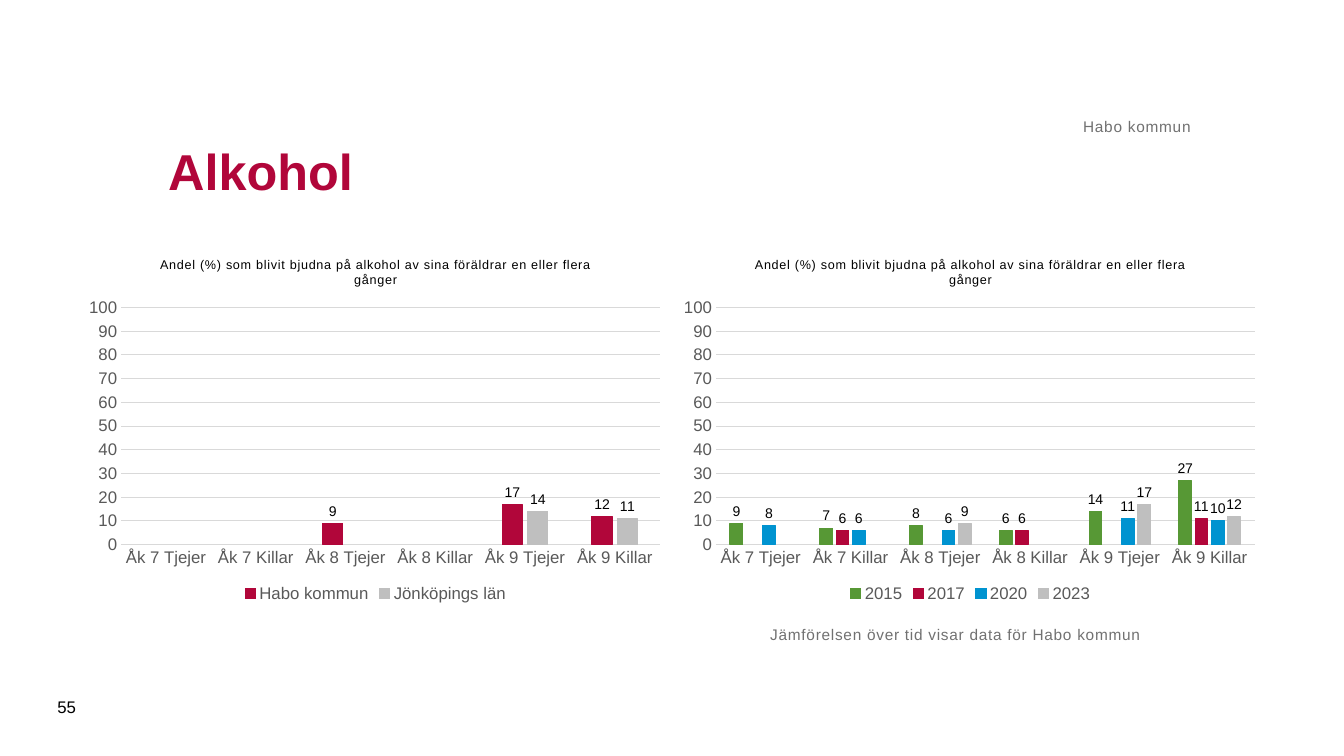
from lxml.etree import SubElement
from pptx import Presentation
from pptx.chart.data import CategoryChartData
from pptx.dml.color import RGBColor
from pptx.enum.chart import XL_CHART_TYPE, XL_LABEL_POSITION, XL_LEGEND_POSITION, XL_TICK_MARK
from pptx.enum.text import MSO_ANCHOR, PP_ALIGN
from pptx.oxml import parse_xml
from pptx.oxml.ns import nsdecls, qn
from pptx.util import Inches, Pt

HUES = {"red": "B1063A", "green": "579835", "blue": "0093D0", "silver": "BFBFBF",
        "rule": "D9D9D9", "axis": "595959", "note": "717171", "black": "000000"}
HEAD = "Andel (%) som blivit bjudna på alkohol av sina föräldrar en eller flera gånger"
CATS = [f"Åk {year} {group}" for year in (7, 8, 9) for group in ("Tjejer", "Killar")]
AREA = [("xMode", "edge"), ("yMode", "edge"), ("x", 0.07), ("y", 0.18), ("w", 0.91), ("h", 0.65)]
CHARTS = [
    (5.93, "#,##0;#,##0", [
        ("Habo kommun", "red", [None, None, 9, None, 17, 12]),
        ("Jönköpings län", "silver", [None, None, None, None, 14, 11])]),
    (50.19, "#,##0", [
        ("2015", "green", [9, 7, 8, 6, 14, 27]),
        ("2017", "red", [None, 6, None, 6, None, 11]),
        ("2020", "blue", [8, 6, 6, None, 11, 10]),
        ("2023", "silver", [None, None, 9, None, 17, 12])]),
]


class Page:
    face = "Arial"

    def __init__(self, deck):
        self.wide, self.high = deck.slide_width, deck.slide_height
        self.slide = deck.slides.add_slide(deck.slide_layouts[6])

    def place(self, x, y, w, h):
        """Turn percentages of the slide's size into lengths."""
        return [int(size * part / 100) for size, part in
                zip((self.wide, self.high) * 2, (x, y, w, h))]

    def style(self, font, size, hue, bold=False):
        font.name, font.size, font.bold = self.face, Pt(size), bold
        font.color.rgb = RGBColor.from_string(HUES[hue])

    def stroke(self, line, hue):
        line.color.rgb = RGBColor.from_string(HUES[hue])
        line.width = Pt(0.75)

    def add_words(self, para, words, size, hue, bold=False, gap=0):
        run = para.add_run()
        run.text = words
        self.style(run.font, size, hue, bold)
        if gap:
            run._r.get_or_add_rPr().set("spc", str(gap))

    def text(self, spot, words, size, hue, bold=False, gap=0, inset=True,
             anchor=MSO_ANCHOR.MIDDLE, align=PP_ALIGN.LEFT):
        frame = self.slide.shapes.add_textbox(*self.place(*spot)).text_frame
        frame.word_wrap = True
        frame.vertical_anchor = anchor
        if not inset:
            frame.margin_left = frame.margin_right = frame.margin_top = frame.margin_bottom = 0
        para = frame.paragraphs[0]
        para.alignment = align
        self.add_words(para, words, size, hue, bold, gap)

    def chart(self, spot, form, rows):
        data = CategoryChartData()
        data.categories = CATS
        for name, _, vals in rows:
            data.add_series(name, vals)
        chart = self.slide.shapes.add_chart(
            XL_CHART_TYPE.COLUMN_CLUSTERED, *self.place(*spot), data).chart
        self.style(chart.font, 10, "black")
        chart.has_title = True
        self.add_words(chart.chart_title.text_frame.paragraphs[0], HEAD, 9, "black", gap=50)
        chart.has_legend = True
        chart.legend.position = XL_LEGEND_POSITION.BOTTOM
        chart.legend.include_in_layout = False
        self.style(chart.legend.font, 12, "axis")
        self.axes(chart)
        self.bars(chart.plots[0], form, rows)
        self.fit(chart)

    def axes(self, chart):
        for axis in (chart.category_axis, chart.value_axis):
            axis.major_tick_mark = axis.minor_tick_mark = XL_TICK_MARK.NONE
            self.style(axis.tick_labels.font, 12, "axis")
        self.stroke(chart.category_axis.format.line, "rule")
        scale = chart.value_axis
        scale.minimum_scale, scale.maximum_scale, scale.major_unit = 0, 100, 10
        scale.format.line.fill.background()
        scale.has_major_gridlines = True
        self.stroke(scale.major_gridlines.format.line, "rule")
        scale.tick_labels.number_format = "#,##0;#,##0"
        scale.tick_labels.number_format_is_linked = False

    def bars(self, plot, form, rows):
        plot.gap_width, plot.overlap, plot.vary_by_categories = 219, -27, False
        for bar, (_, hue, _) in zip(plot.series, rows):
            bar.format.fill.solid()
            bar.format.fill.fore_color.rgb = RGBColor.from_string(HUES[hue])
            self.stroke(bar.format.line, hue)
            labels = bar.data_labels
            labels.show_value = True
            labels.position = XL_LABEL_POSITION.OUTSIDE_END
            labels.number_format = form
            labels.number_format_is_linked = False
            self.style(labels.font, 10, "black")

    def fit(self, chart):
        """Fix the inner plot area as shares of the chart."""
        area = chart._chartSpace.chart.plotArea
        for old in area.findall(qn("c:layout")):
            area.remove(old)
        layout = parse_xml(f'<c:layout {nsdecls("c")}><c:manualLayout>'
                           '<c:layoutTarget val="inner"/></c:manualLayout></c:layout>')
        for tag, val in AREA:
            SubElement(layout[0], qn(f"c:{tag}")).set("val", str(val))
        area.insert(0, layout)


def main():
    deck = Presentation()
    deck.slide_width, deck.slide_height = Inches(13.33), Inches(7.5)
    page = Page(deck)
    for left, form, rows in CHARTS:
        page.chart((left, 32, 44.04, 48.27), form, rows)
    page.text((11.78, 13.07, 76.82, 18.93), "Alkohol", 36, "red", bold=True)
    page.text((57.31, 82.67, 39.83, 12.53), "Jämförelsen över tid visar data för Habo kommun",
              11, "note", gap=50, inset=False, anchor=MSO_ANCHOR.TOP)
    page.text((11.78, 8.27, 76.82, 9.73), "Habo kommun", 11, "note", gap=50,
              inset=False, anchor=MSO_ANCHOR.BOTTOM, align=PP_ALIGN.RIGHT)
    page.text((3.53, 90.8, 4.28, 5.33), "55", 12, "black")
    deck.save("out.pptx")


if __name__ == "__main__":
    main()
